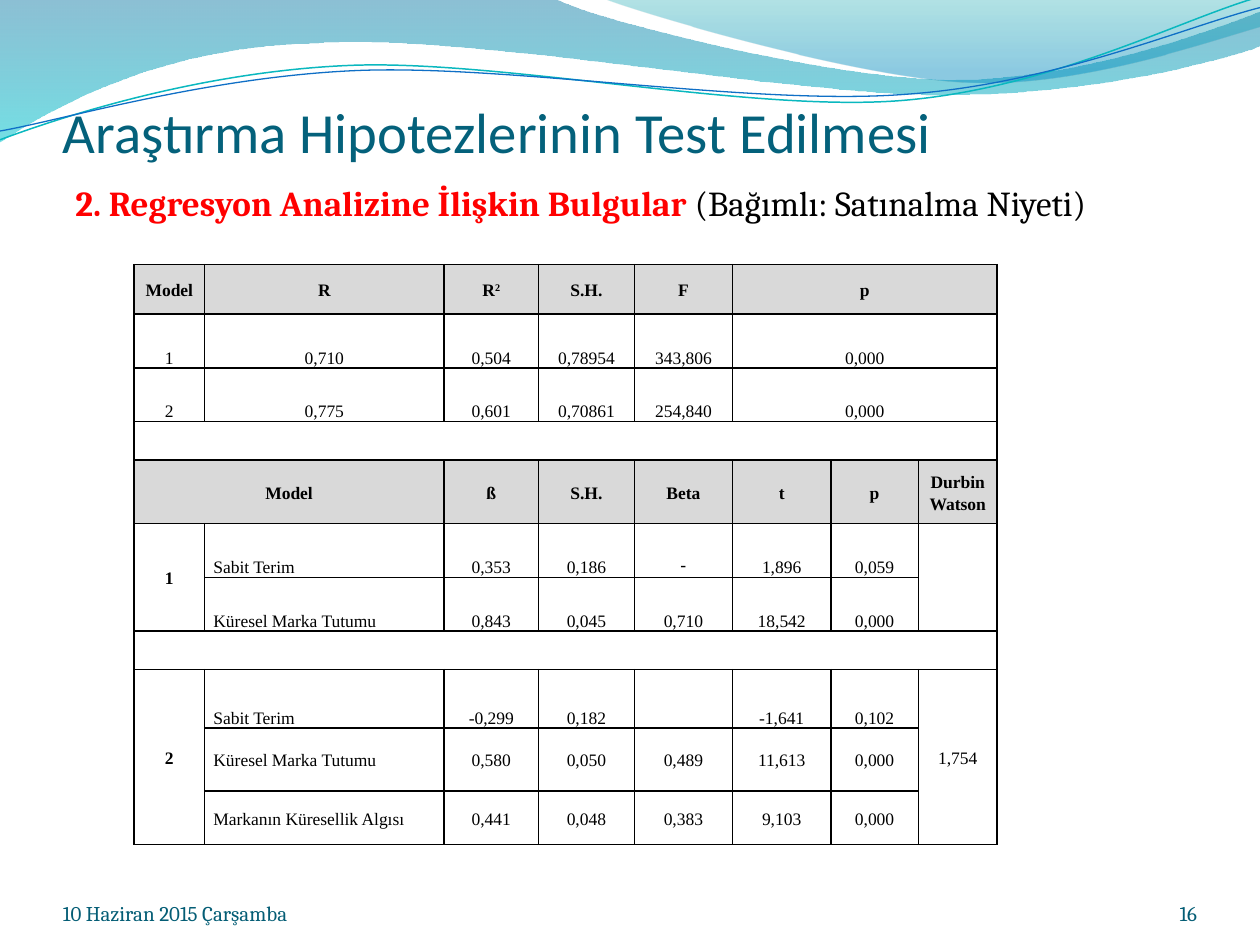
"""Build the slide of regression findings with its wave header and table."""
from dataclasses import dataclass, field
from math import cos, radians, sin

from lxml.etree import SubElement
from pptx import Presentation
from pptx.dml.color import RGBColor
from pptx.enum.text import MSO_ANCHOR, PP_ALIGN
from pptx.oxml.ns import qn
from pptx.util import Inches, Pt

COLS, ROWS = 100, 75
UNIT = Inches(10) / COLS
TONES = {
    "black": "000000", "red": "FF0000", "title": "04617B", "foot": "045D75",
    "head": "D9D9D9", "teal": "0AB8BF", "blue": "0F6FC6",
    "deep": "0074A1", "aqua": "00C6CF", "sea": "00A1A9", "sky": "008BBF",
}


@dataclass
class Wave:
    box: tuple
    start: tuple
    steps: list
    stops: list = field(default_factory=list)
    line: tuple = ()
    turn: float = 0


@dataclass
class Run:
    text: str
    size: float
    face: str
    tone: str = "black"
    bold: bool = False
    base: int = 0


@dataclass
class Block:
    box: tuple
    runs: list
    align: PP_ALIGN
    frame: dict
    lead: float = 0


WAVES = [
    Wave((-0.1, -0.1, 100.2, 11.4), (0, 0),
         [(44, -0.1), (47.6, 1.7, 66.4, 6.3, 75.8, 6.3), (85.3, 6.3, 95.8, 2.6, 100, 0.9),
          (100.1, 3.6), (98.3, 4.4, 87, 7.6, 74.6, 7.5), (62.2, 7.5, 38.2, 2.8, 25.7, 3.4),
          (12.9, 3.6, 4.6, 8.3, -0.1, 11.3), (0, 0)],
         [(0, "deep", 45), (1, "aqua", 55)]),
    Wave((47.9, -0.1, 52.1, 7), (47.9, -0.1),
         [(50.9, 1.1, 68.2, 6.2, 76.9, 6.5), (85.6, 6.9, 96.1, 3.2, 100, 2.1), (100, 0), (47.9, -0.1)],
         [(0, "sea", 30), (0.8, "sky", 45)]),
    Wave((-0.2, 2.2, 100.2, 7.1), (0, 11.1),
         [(4.8, 9.3, 15.8, 5.7, 27.7, 5.2), (39.5, 4.7, 59.3, 8.9, 71.3, 8),
          (83.3, 7.1, 93.8, 1.5, 99.8, -0.2)], line=("teal", 0.85), turn=-2.7),
    Wave((-0.2, 3, 100.3, 5.8), (0, 10.4),
         [(4.7, 9.6, 16.4, 6.1, 28.3, 5.6), (40.3, 5.1, 59.7, 8.4, 71.7, 7.5),
          (83.6, 6.7, 94.1, 2.1, 100, 0.6)], line=("blue", 0.75), turn=-2.7),
]

LOW = {"vertical_anchor": MSO_ANCHOR.BOTTOM, "margin_left": 0, "margin_right": 0,
       "margin_top": 0, "margin_bottom": 0}
TOP = {"vertical_anchor": MSO_ANCHOR.TOP}
BLOCKS = [
    Block((5, 7.7, 90, 5.4), [Run("Araştırma Hipotezlerinin Test Edilmesi", 32.4, "Calibri", "title")],
          PP_ALIGN.JUSTIFY, LOW | {"margin_top": Inches(0.05)}),
    Block((5, 13.9, 90, 55.3), [Run("2. Regresyon Analizine İlişkin Bulgular ", 20, "Cambria", "red", True),
                                Run("(Bağımlı: Satınalma Niyeti)", 20, "Cambria")],
          PP_ALIGN.JUSTIFY, TOP, 4),
    Block((5, 69.5, 23.3, 4), [Run("10 Haziran 2015 Çarşamba", 12, "Cambria", "foot")], PP_ALIGN.LEFT, LOW),
    Block((86.7, 69.5, 8.3, 4), [Run("16", 12, "Cambria", "foot")], PP_ALIGN.RIGHT, LOW),
]

WIDTHS = [5.6, 19, 7.5, 7.6, 7.8, 7.8, 6.95, 6.25]
HEIGHTS = [3.94, 4.26, 4.26, 3.07, 5.04, 4.26, 4.26, 3.07, 4.62, 5, 4.26]
SPANS = [(0, 5, 0, 7), (1, 5, 1, 7), (2, 5, 2, 7), (3, 0, 3, 7), (4, 0, 4, 1), (5, 0, 6, 0),
         (5, 7, 6, 7), (7, 0, 7, 7), (8, 0, 10, 0), (8, 7, 10, 7)]
HEADS = (0, 4)
DATA = [
    ["Model", "R", "R²", "S.H.", "F", "p", "", ""],
    ["1", "0,710", "0,504", "0,78954", "343,806", "0,000", "", ""],
    ["2", "0,775", "0,601", "0,70861", "254,840", "0,000", "", ""],
    [""] * 8,
    ["Model", "", "ß", "S.H.", "Beta", "t", "p", "Durbin Watson"],
    ["1", "Sabit Terim", "0,353", "0,186", "-", "1,896", "0,059", ""],
    ["", "Küresel Marka Tutumu", "0,843", "0,045", "0,710", "18,542", "0,000", ""],
    [""] * 8,
    ["2", "Sabit Terim", "-0,299", "0,182", "", "-1,641", "0,102", "1,754"],
    ["", "Küresel Marka Tutumu", "0,580", "0,050", "0,489", "11,613", "0,000", ""],
    ["", "Markanın Küresellik Algısı", "0,441", "0,048", "0,383", "9,103", "0,000", ""],
]


def cells(*spots: float) -> list:
    return [round(spot * UNIT) for spot in spots]


def shade(tone: str) -> RGBColor:
    return RGBColor.from_string(TONES[tone])


def apply(thing, values: dict) -> None:
    for name, value in values.items():
        setattr(thing, name, value)


def place(wave: Wave, x: float, y: float) -> list:
    left, top, wide, high = wave.box
    dx, dy = x - left - wide / 2, y - top - high / 2
    turn = radians(-wave.turn)
    return cells(dx * cos(turn) - dy * sin(turn) + wide / 2, dx * sin(turn) + dy * cos(turn) + high / 2)


def trace(shape, wave: Wave) -> None:
    route = next(shape.element.iter(qn("a:path")))
    for node in list(route):
        route.remove(node)
    left, top, wide, high = cells(*wave.box)
    route.set("w", str(wide))
    route.set("h", str(high))
    kinds = {2: "a:lnTo", 6: "a:cubicBezTo"}
    moves = [("a:moveTo", wave.start)] + [(kinds[len(step)], step) for step in wave.steps]
    for kind, step in moves:
        node = SubElement(route, qn(kind))
        for x, y in zip(step[::2], step[1::2]):
            px, py = place(wave, x, y)
            SubElement(node, qn("a:pt"), x=str(px), y=str(py))
    if wave.stops:
        SubElement(route, qn("a:close"))
    apply(shape, {"left": left, "top": top, "width": wide, "height": high, "rotation": wave.turn})


def draw_wave(slide, wave: Wave) -> None:
    pen = slide.shapes.build_freeform(*cells(*wave.start))
    pen.add_line_segments([cells(*step[-2:]) for step in wave.steps], close=False)
    shape = pen.convert_to_shape()
    trace(shape, wave)
    shape.shadow.inherit = False
    if wave.line:
        shape.fill.background()
        shape.line.color.rgb = shade(wave.line[0])
        shape.line.width = Pt(wave.line[1])
        return
    shape.line.fill.background()
    shape.fill.gradient()
    shape.fill.gradient_angle = 270
    for stop, (spot, tone, _) in zip(shape.fill.gradient_stops, wave.stops):
        stop.position = spot
        stop.color.rgb = shade(tone)
    for node, (_, _, alpha) in zip(shape.element.iter(qn("a:gs")), wave.stops):
        SubElement(node[0], qn("a:alpha"), val=str(alpha * 1000))


def write(para, runs: list, align: PP_ALIGN, **values) -> None:
    apply(para, {"alignment": align} | values)
    for item in runs:
        run = para.add_run()
        run.text = item.text
        apply(run.font, {"size": Pt(item.size), "name": item.face, "bold": item.bold})
        run.font.color.rgb = shade(item.tone)
        if item.base:
            run.font._element.set("baseline", str(item.base * 1000))


def draw_block(slide, block: Block) -> None:
    frame = slide.shapes.add_textbox(*cells(*block.box)).text_frame
    apply(frame, {"word_wrap": True} | block.frame)
    write(frame.paragraphs[0], block.runs, block.align, space_before=Pt(block.lead))


def edge(cell) -> None:
    props = cell._tc.get_or_add_tcPr()
    for side in "LRTB":
        line = SubElement(props, qn(f"a:ln{side}"), w=str(Pt(1)))
        SubElement(SubElement(line, qn("a:solidFill")), qn("a:srgbClr"), val=TONES["black"])


def fill_cell(cell, row: int, col: int) -> None:
    text = DATA[row][col]
    bold = row in HEADS or (col == 0 and row > 4)
    middle = bold or row > 8 or col == 7
    apply(cell, {"margin_left": Inches(0.07), "margin_right": Inches(0.07), "margin_top": 0,
                 "margin_bottom": 0,
                 "vertical_anchor": MSO_ANCHOR.MIDDLE if middle else MSO_ANCHOR.BOTTOM})
    edge(cell)
    if row in HEADS:
        cell.fill.solid()
        cell.fill.fore_color.rgb = shade("head")
    else:
        cell.fill.background()
    para = cell.text_frame.paragraphs[0]
    if not text:
        SubElement(para._p, qn("a:endParaRPr"), sz="1000")
        return
    face, size = ("Calibri", 11) if text == "-" else ("Times New Roman", 10)
    runs = [Run(text.rstrip("²"), size, face, bold=bold)]
    if text.endswith("²"):
        runs.append(Run("2", size, face, bold=bold, base=30))
    align = PP_ALIGN.LEFT if col == 1 and row > 4 else PP_ALIGN.CENTER
    write(para, runs, align, line_spacing=1.15, space_after=Pt(0 if text == "-" else 6))


def draw_table(slide) -> None:
    box = cells(10.64, 21, sum(WIDTHS), sum(HEIGHTS))
    table = slide.shapes.add_table(len(HEIGHTS), len(WIDTHS), *box).table
    apply(table, {"first_row": False, "horz_banding": False})
    for col, width in zip(table.columns, cells(*WIDTHS)):
        col.width = width
    for row, height in zip(table.rows, cells(*HEIGHTS)):
        row.height = height
    for top, left, low, right in SPANS:
        table.cell(top, left).merge(table.cell(low, right))
    for row in range(len(HEIGHTS)):
        for col in range(len(WIDTHS)):
            fill_cell(table.cell(row, col), row, col)


def main() -> None:
    deck = Presentation()
    deck.slide_width, deck.slide_height = cells(COLS, ROWS)
    slide = deck.slides.add_slide(deck.slide_layouts[6])
    for wave in WAVES:
        draw_wave(slide, wave)
    for block in BLOCKS:
        draw_block(slide, block)
    draw_table(slide)
    deck.save("out.pptx")


if __name__ == "__main__":
    main()
